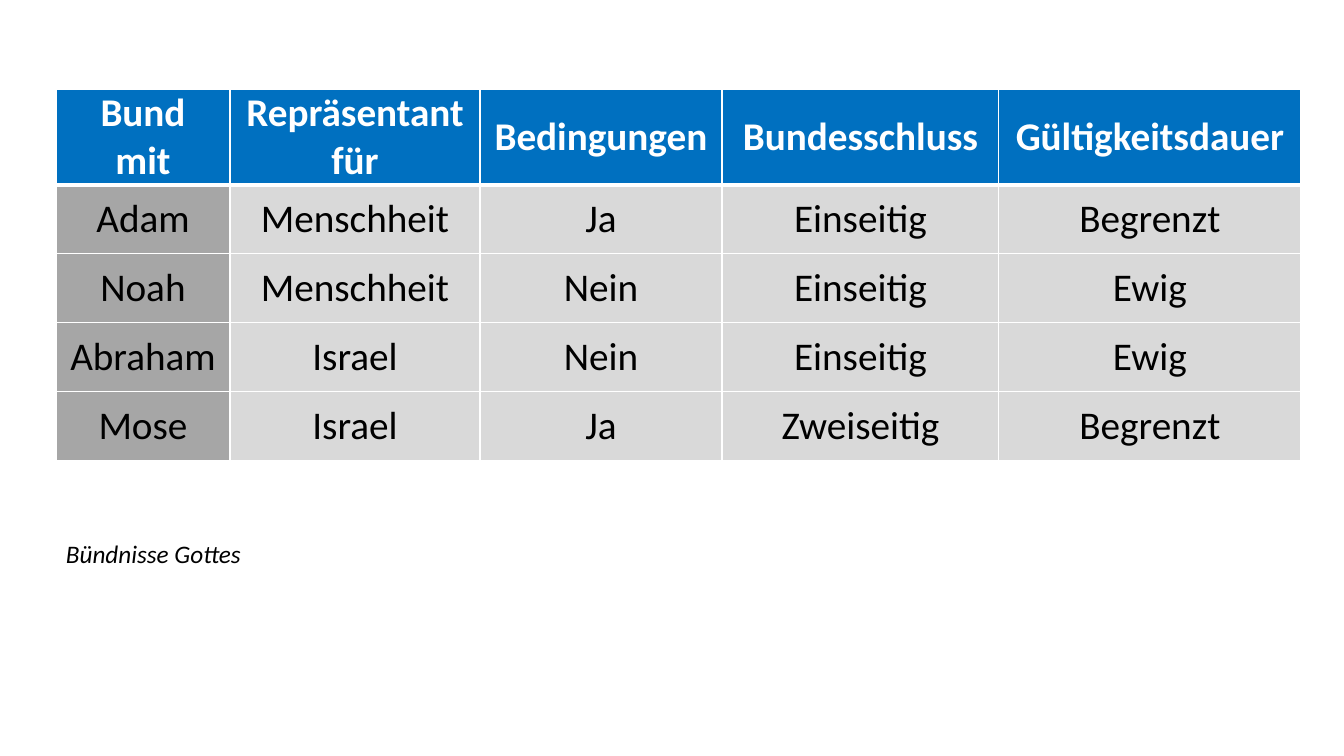
from lxml import etree
from pptx import Presentation
from pptx.dml.color import RGBColor
from pptx.enum.text import MSO_ANCHOR, MSO_AUTO_SIZE, PP_ALIGN
from pptx.oxml.ns import qn
from pptx.util import Pt

MIDDLE = MSO_ANCHOR.MIDDLE
GROW = MSO_AUTO_SIZE.SHAPE_TO_FIT_TEXT
CENTER = PP_ALIGN.CENTER
PX = 914400 / 100.8
COLORS = {
    "header": "0070C0",
    "name": "A6A6A6",
    "body": "D9D9D9",
    "white": "FFFFFF",
    "black": "000000",
}
LEFT, TOP = 56, 89
COLUMN_WIDTHS = [174, 250, 242, 277, 302]
HEADER_HEIGHT, ROW_HEIGHT = 47, 69
COVENANTS = [
    ["Bund mit", "Repräsentant für", "Bedingungen", "Bundesschluss", "Gültigkeitsdauer"],
    ["Adam", "Menschheit", "Ja", "Einseitig", "Begrenzt"],
    ["Noah", "Menschheit", "Nein", "Einseitig", "Ewig"],
    ["Abraham", "Israel", "Nein", "Einseitig", "Ewig"],
    ["Mose", "Israel", "Ja", "Zweiseitig", "Begrenzt"],
]


def px(length):
    return round(length * PX)


def format_text(para, text, color, **formats):
    span = para.add_run()
    span.text = text
    span.font.color.rgb = RGBColor.from_string(COLORS[color])
    for name, value in {"name": "Calibri", **formats}.items():
        setattr(span.font, name, value)


deck = Presentation()
deck.slide_width, deck.slide_height = px(1344), px(756)
page = deck.slides.add_slide(deck.slide_layouts[6])

row_heights = [HEADER_HEIGHT] + [ROW_HEIGHT] * (len(COVENANTS) - 1)
table = page.shapes.add_table(
    len(row_heights), len(COLUMN_WIDTHS),
    px(LEFT), px(TOP), px(sum(COLUMN_WIDTHS)), px(sum(row_heights)),
).table
table.horz_banding = False
for column, width in zip(table.columns, COLUMN_WIDTHS):
    column.width = px(width)
for row, height in zip(table.rows, row_heights):
    row.height = px(height)

cell_format = {
    "vertical_anchor": MIDDLE,
    "margin_left": px(13),
    "margin_right": px(13),
    "margin_top": 0,
    "margin_bottom": 0,
}
for row_index, texts in enumerate(COVENANTS):
    is_header = row_index == 0
    for column_index, text in enumerate(texts):
        cell = table.cell(row_index, column_index)
        for name, value in cell_format.items():
            setattr(cell, name, value)
        para = cell.text_frame.paragraphs[0]
        para.alignment = CENTER
        format_text(para, text, "white" if is_header else "black",
                    size=Pt(28), bold=is_header)

        properties = cell._tc.get_or_add_tcPr()
        borders = {"lnL": 1, "lnR": 1, "lnT": 3 if row_index == 1 else 1,
                   "lnB": 3 if is_header else 1}
        for side, width in borders.items():
            line = etree.SubElement(properties, qn(f"a:{side}"), w=str(Pt(width)))
            paint = etree.SubElement(line, qn("a:solidFill"))
            etree.SubElement(paint, qn("a:srgbClr"), val=COLORS["white"])
        fill = "header" if is_header else "name" if column_index == 0 else "body"
        cell.fill.solid()
        cell.fill.fore_color.rgb = RGBColor.from_string(COLORS[fill])

caption = page.shapes.add_textbox(px(LEFT), px(533), px(198), px(40))
caption.text_frame.word_wrap = False
caption.text_frame.auto_size = GROW
format_text(caption.text_frame.paragraphs[0], "Bündnisse Gottes", "black",
            size=Pt(18), italic=True)

deck.save("out.pptx")
